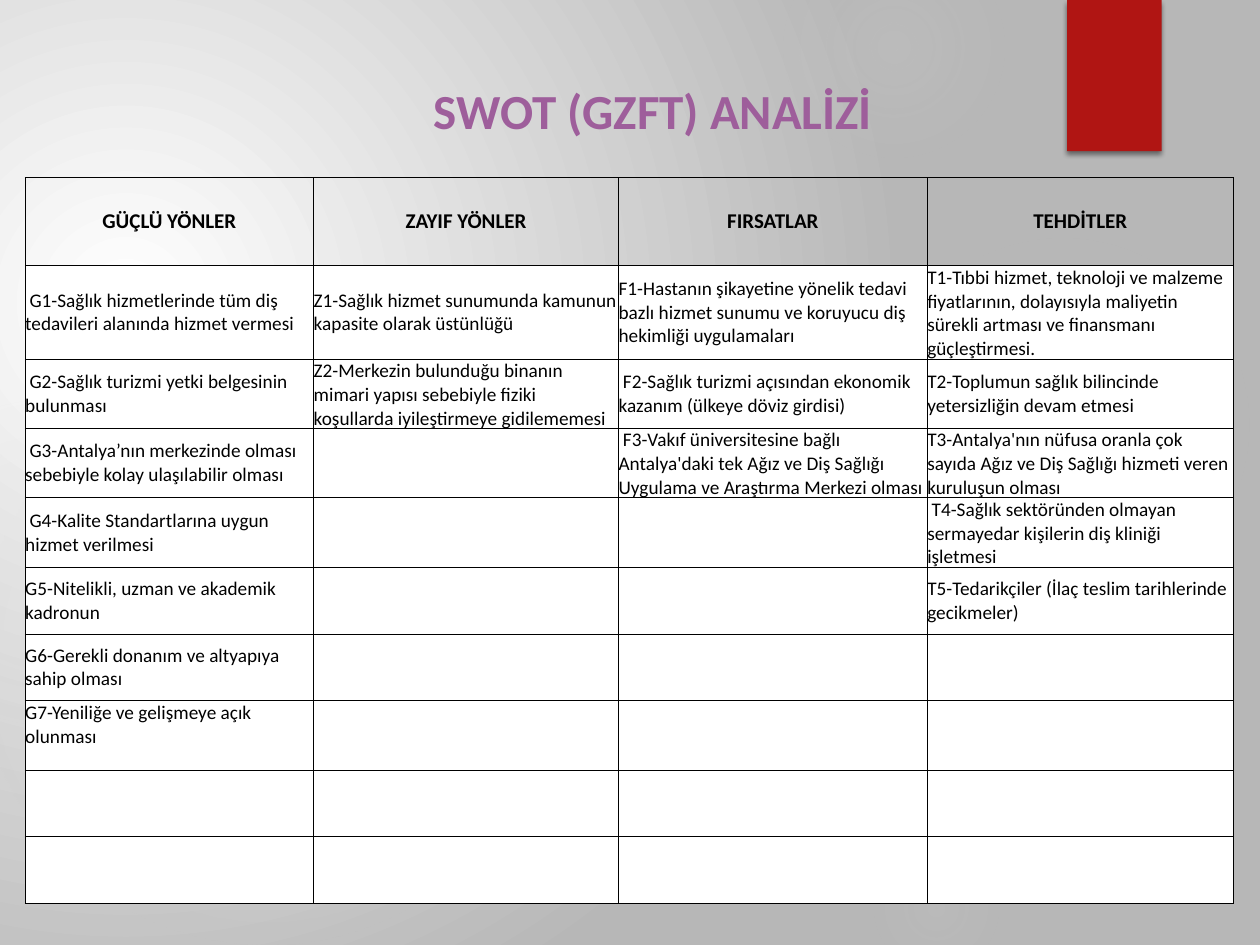
from dataclasses import dataclass

from pptx import Presentation
from pptx import oxml
from pptx.dml.color import RGBColor
from pptx.enum import shapes, text
from pptx.oxml import ns
from pptx.util import Inches, Pt


@dataclass(frozen=True)
class Theme:
    font: str = "Calibri"
    title: str = "9E5E9B"
    ink: str = "000000"
    paper: str = "FFFFFF"
    edge: str = "B7B7B7"
    glow: str = "D9D9D9"
    accent: str = "B01513"
    big: int = 28
    head: int = 12
    body: int = 11
    rule: float = 0.5


THEME = Theme()

# Left, top, diameter, then the alpha and place of the gradient stops
GLOWS = [
    (6.89, 1.83, 3.08, (7, 6), 69),
    (6.22, -0.5, 1.75, (14, 7), 73),
    (6.89, 6.67, 1.08, (9, 5), 66),
    (-0.17, 2.92, 4.58, (11, 10), 75),
    (-0.92, 3.17, 2.58, (8, 8), 72),
]

# Heading and entries of each column
SWOT = {
    "GÜÇLÜ YÖNLER": [
        " G1-Sağlık hizmetlerinde tüm diş tedavileri alanında hizmet vermesi",
        " G2-Sağlık turizmi yetki belgesinin bulunması",
        " G3-Antalya’nın merkezinde olması sebebiyle kolay ulaşılabilir olması",
        " G4-Kalite Standartlarına uygun hizmet verilmesi",
        "G5-Nitelikli, uzman ve akademik kadronun",
        "G6-Gerekli donanım ve altyapıya sahip olması",
        "G7-Yeniliğe ve gelişmeye açık olunması",
    ],
    "ZAYIF YÖNLER": [
        "Z1-Sağlık hizmet sunumunda kamunun kapasite olarak üstünlüğü",
        "Z2-Merkezin bulunduğu binanın mimari yapısı sebebiyle fiziki "
        "koşullarda iyileştirmeye gidilememesi",
    ],
    "FIRSATLAR": [
        "F1-Hastanın şikayetine yönelik tedavi bazlı hizmet sunumu ve "
        "koruyucu diş hekimliği uygulamaları",
        " F2-Sağlık turizmi açısından ekonomik kazanım (ülkeye döviz girdisi)",
        " F3-Vakıf üniversitesine bağlı Antalya'daki tek Ağız ve Diş Sağlığı "
        "Uygulama ve Araştırma Merkezi olması",
    ],
    "TEHDİTLER": [
        "T1-Tıbbi hizmet, teknoloji ve malzeme fiyatlarının, dolayısıyla "
        "maliyetin sürekli artması ve finansmanı güçleştirmesi.",
        "T2-Toplumun sağlık bilincinde yetersizliğin devam etmesi",
        "T3-Antalya'nın nüfusa oranla çok sayıda Ağız ve Diş Sağlığı hizmeti "
        "veren kuruluşun olması",
        " T4-Sağlık sektöründen olmayan sermayedar kişilerin diş kliniği "
        "işletmesi",
        "T5-Tedarikçiler (İlaç teslim tarihlerinde gecikmeler)",
    ],
}
COLS = [2.29, 2.42, 2.45, 2.43]
ROWS = [0.7, 0.74, 0.55, 0.55, 0.55, 0.53, 0.53, 0.55, 0.53, 0.53]


def make(xml):
    return oxml.parse_xml(xml.replace(">", f" {ns.nsdecls('a')}>", 1))


def blend(root, stops, focus):
    """Swap the first solid fill under root for a radial gradient."""
    marks = "".join(
        f'<a:gs pos="{pos * 1000}"><a:srgbClr val="{color}">'
        f'<a:alpha val="{alpha * 1000}"/></a:srgbClr></a:gs>'
        for pos, color, alpha in stops)
    rect = " ".join(f'{side}="{n * 1000}"' for side, n in zip("ltrb", focus))
    fill = make(f'<a:gradFill rotWithShape="1"><a:gsLst>{marks}</a:gsLst>'
                f'<a:path path="circle"><a:fillToRect {rect}/></a:path></a:gradFill>')
    solid = next(root.iter(ns.qn("a:solidFill")))
    solid.getparent().replace(solid, fill)


def style(para, size, color, bold=False, align=text.PP_ALIGN.LEFT):
    para.alignment = align
    for font in [para.font] + [run.font for run in para.runs]:
        font.name, font.size, font.bold = THEME.font, Pt(size), bold
        font.color.rgb = RGBColor.from_string(color)


def add_plain(slide, kind, box, color):
    shape = slide.shapes.add_shape(kind, *map(Inches, box))
    shape.shadow.inherit = False
    shape.fill.solid()
    shape.fill.fore_color.rgb = RGBColor.from_string(color)
    shape.line.fill.background()
    return shape


def add_back(slide):
    # Page gradient
    slide.background.fill.solid()
    blend(slide.element, [(0, THEME.paper, 100), (100, THEME.edge, 100)],
          (45, 65, 125, 100))
    # Soft light spots
    for left, top, size, (core, mid), end in GLOWS:
        spot = add_plain(slide, shapes.MSO_SHAPE.OVAL,
                         (left, top, size, size), THEME.glow)
        stops = [(0, THEME.glow, core), (36, THEME.glow, mid), (end, THEME.glow, 0)]
        blend(spot.element.spPr, stops, (50,) * 4)


def add_ribbon(slide, box):
    ribbon = add_plain(slide, shapes.MSO_SHAPE.RECTANGLE, box, THEME.accent)
    effects = ribbon.element.spPr.find(ns.qn("a:effectLst"))
    effects.append(make(
        f'<a:outerShdw blurRad="{Pt(3)}" dist="{Pt(2)}" dir="5400000" rotWithShape="0">'
        f'<a:srgbClr val="{THEME.ink}"><a:alpha val="45000"/></a:srgbClr></a:outerShdw>'))


def add_title(slide, box):
    frame = slide.shapes.add_textbox(*map(Inches, box)).text_frame
    frame.word_wrap = True
    frame.auto_size = text.MSO_AUTO_SIZE.SHAPE_TO_FIT_TEXT
    frame.text = "SWOT (GZFT) ANALİZİ"
    style(frame.paragraphs[0], THEME.big, THEME.title, True, text.PP_ALIGN.CENTER)


def set_cell(cell, words, head):
    cell.margin_left = cell.margin_right = cell.margin_top = cell.margin_bottom = 0
    cell.vertical_anchor = text.MSO_ANCHOR.MIDDLE
    cell.text_frame.text = words
    para = cell.text_frame.paragraphs[0]
    if head:
        cell.fill.background()
        style(para, THEME.head, THEME.ink, True, text.PP_ALIGN.CENTER)
    else:
        cell.fill.solid()
        cell.fill.fore_color.rgb = RGBColor.from_string(THEME.paper)
        style(para, THEME.body, THEME.ink)
    # Borders stand before the fill
    props = cell._tc.get_or_add_tcPr()
    for i, side in enumerate("LRTB"):
        props.insert(i, make(
            f'<a:ln{side} w="{Pt(THEME.rule)}"><a:solidFill>'
            f'<a:srgbClr val="{THEME.ink}"/></a:solidFill></a:ln{side}>'))


def add_grid(slide, box):
    table = slide.shapes.add_table(len(ROWS), len(COLS), *map(Inches, box)).table
    table.first_row = table.horz_banding = False
    for row, size in zip(table.rows, ROWS):
        row.height = Inches(size)
    for c, (head, items) in enumerate(SWOT.items()):
        table.columns[c].width = Inches(COLS[c])
        words = [head] + items
        for r in range(len(ROWS)):
            set_cell(table.cell(r, c), words[r] if r < len(words) else "", r == 0)
    # The last strength sits at the top of its row
    table.cell(7, 0).vertical_anchor = text.MSO_ANCHOR.TOP


def main():
    deck = Presentation()
    deck.slide_width, deck.slide_height = Inches(10), Inches(7.5)
    slide = deck.slides.add_slide(deck.slide_layouts[6])
    add_back(slide)
    add_ribbon(slide, (8.47, 0, 0.75, 1.2))
    add_title(slide, (2.77, 0.59, 4.82, 0.57))
    add_grid(slide, (0.2, 1.41, sum(COLS), sum(ROWS)))
    deck.save("out.pptx")


if __name__ == "__main__":
    main()
